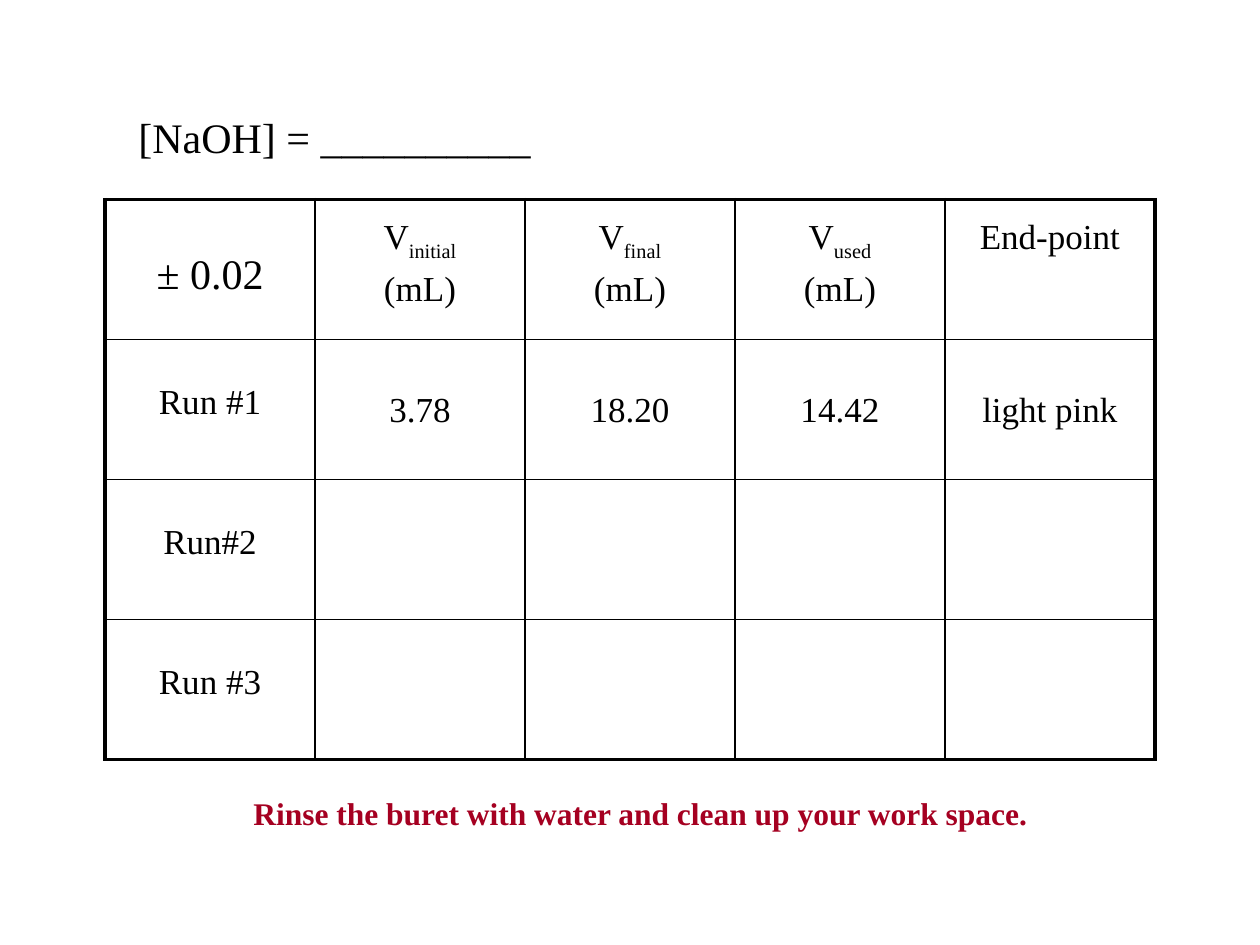
import pptx
import pptx.dml.color
import pptx.enum.text
import pptx.oxml
import pptx.oxml.ns
import pptx.util

Pt = pptx.util.Pt
ALIGN = pptx.enum.text.PP_ALIGN
ANCHOR = pptx.enum.text.MSO_ANCHOR

COLORS = {"ink": "000000", "reminder": "A50021"}
COLUMN_WIDTH, ROW_HEIGHT = 120, 80
INNER_LINE, OUTER_LINE = 1, 2.25

VOLUMES = ["initial", "final", "used"]
RUNS = [
    ["Run #1", "3.78", "18.20", "14.42", "light pink"],
    ["Run#2", "", "", "", ""],
    ["Run #3", "", "", "", ""],
]


class LabSlide:
    font = "Times New Roman"

    def __init__(self, slide):
        self.slide = slide

    def run(self, paragraph, text, size, color="ink", bold=False, subscript=False):
        run = paragraph.add_run()
        run.text = text
        run.font.name = self.font
        run.font.size = Pt(size)
        run.font.bold = bold
        run.font.color.rgb = pptx.dml.color.RGBColor.from_string(COLORS[color])
        if subscript:
            run.font._element.set("baseline", "-25000")

    def text(self, left, top, width, height, text, size, align=ALIGN.LEFT, **style):
        frame = self.slide.shapes.add_textbox(
            Pt(left), Pt(top), Pt(width), Pt(height)).text_frame
        frame.word_wrap = True
        frame.paragraphs[0].alignment = align
        self.run(frame.paragraphs[0], text, size, **style)

    def table(self, left, top, rows, columns):
        table = self.slide.shapes.add_table(
            rows, columns, Pt(left), Pt(top),
            Pt(columns * COLUMN_WIDTH), Pt(rows * ROW_HEIGHT)).table
        table.first_row = table.horz_banding = False
        for r in range(rows):
            for c in range(columns):
                cell = table.cell(r, c)
                outer_sides = {"L": c == 0, "R": c == columns - 1,
                               "T": r == 0, "B": r == rows - 1}
                for side, is_outer in outer_sides.items():
                    self.border(cell, side, OUTER_LINE if is_outer else INNER_LINE)
                cell.fill.background()
        return table

    def border(self, cell, side, width):
        cell._tc.get_or_add_tcPr().append(pptx.oxml.parse_xml(
            f'<a:ln{side} {pptx.oxml.ns.nsdecls("a")} w="{Pt(width)}"><a:solidFill>'
            f'<a:srgbClr val="{COLORS["ink"]}"/></a:solidFill></a:ln{side}>'))

    def cell(self, cell, lines, size=20, inset_top=10.8, anchor=ANCHOR.TOP, spacing=None):
        """Fill a cell; each line is a list of (text, is_subscript) pairs."""
        cell.margin_top = Pt(inset_top)
        cell.vertical_anchor = anchor
        frame = cell.text_frame
        for index, line in enumerate(lines):
            paragraph = frame.add_paragraph() if index else frame.paragraphs[0]
            paragraph.alignment = ALIGN.CENTER
            if index:
                paragraph.space_before = Pt(0.2 * size)
            if spacing:
                paragraph.line_spacing = spacing
            for text, is_subscript in line:
                self.run(paragraph, text, size, subscript=is_subscript)


def main():
    deck = pptx.Presentation()
    deck.slide_width, deck.slide_height = Pt(720), Pt(540)
    lab = LabSlide(deck.slides.add_slide(deck.slide_layouts[6]))

    titration = lab.table(60, 114, len(RUNS) + 1, len(VOLUMES) + 2)
    lab.cell(titration.cell(0, 0), [[("± 0.02", False)]], size=24, anchor=ANCHOR.MIDDLE)
    for column, volume in enumerate(VOLUMES, 1):
        lab.cell(titration.cell(0, column),
                 [[("V", False), (volume, True)], [("(mL)", False)]])
    lab.cell(titration.cell(0, 4), [[("End-point", False)]])

    for row, (run_name, *readings) in enumerate(RUNS, 1):
        lab.cell(titration.cell(row, 0), [[(run_name, False)]], inset_top=25.2)
        for column, reading in enumerate(readings, 1):
            if reading:
                lab.cell(titration.cell(row, column), [[(reading, False)]], spacing=1.85)

    lab.text(72, 60, 264, 36, "[NaOH] = __________", 24)
    lab.text(36, 450, 660, 29, "Rinse the buret with water and clean up your work space.",
             18, ALIGN.CENTER, color="reminder", bold=True)
    deck.save("out.pptx")


if __name__ == "__main__":
    main()
